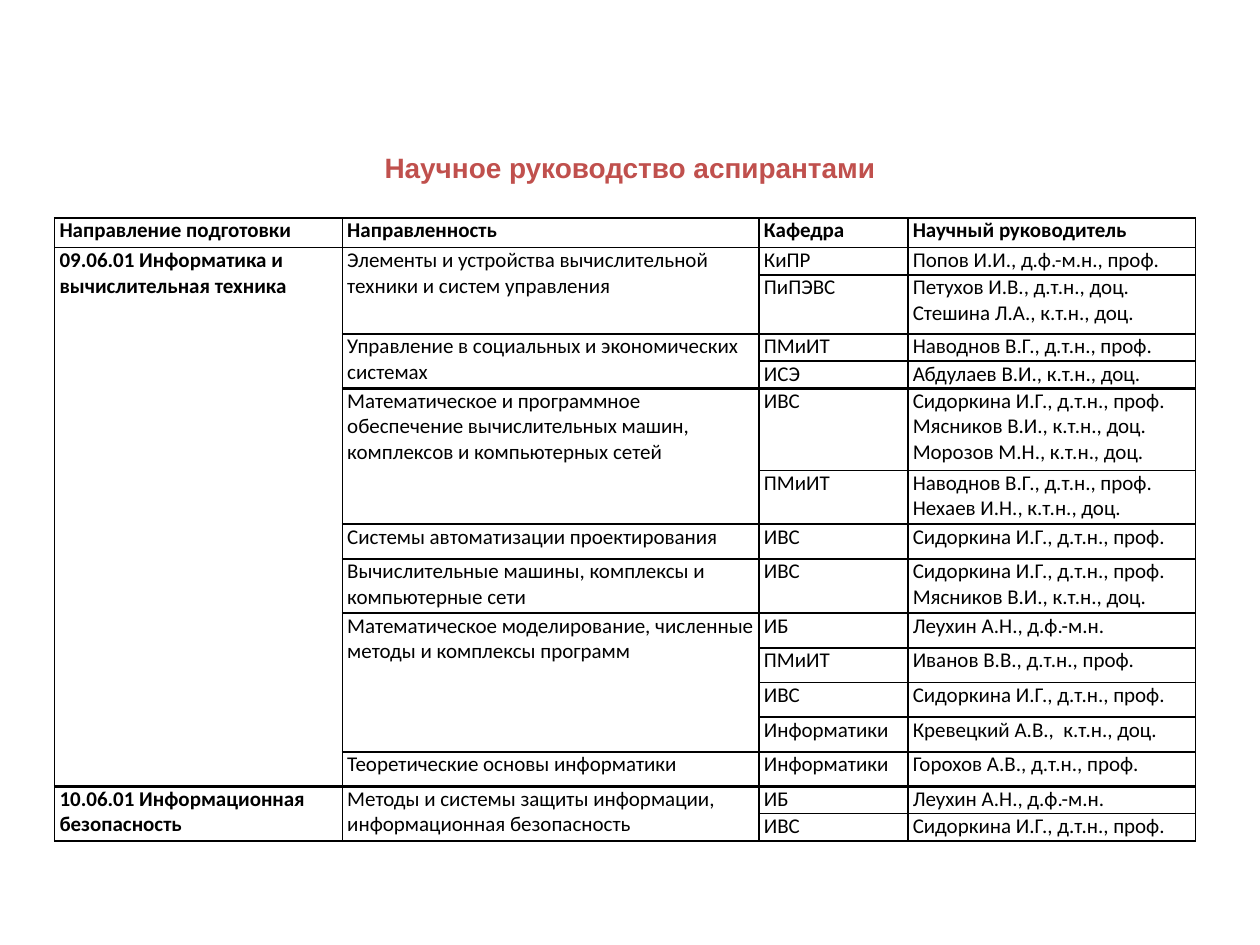
from dataclasses import dataclass

from lxml.etree import SubElement
from pptx import Presentation
from pptx.dml.color import RGBColor
from pptx.enum.text import MSO_ANCHOR, MSO_AUTO_SIZE, PP_ALIGN
from pptx.oxml.ns import qn
from pptx.table import Table, _Cell
from pptx.util import Cm, Pt

BLACK = RGBColor(0x00, 0x00, 0x00)
RED = RGBColor(0xC0, 0x50, 0x4D)
THIN, THICK = 1, 1.5
WIDTHS = (5.8, 8.4, 3, 5.8)
HEADS = ("Направление подготовки", "Направленность", "Кафедра", "Научный руководитель")


@dataclass
class Chair:
    name: str
    staff: list[str]
    height: float


@dataclass
class Focus:
    name: str
    chairs: list[Chair]


@dataclass
class Field:
    name: str
    topics: list[Focus]

    def rows(self) -> int:
        return sum(len(topic.chairs) for topic in self.topics)


SIDOR = "Сидоркина И.Г., д.т.н., проф."
MYASN = "Мясников В.И., к.т.н., доц."
NAVOD = "Наводнов В.Г., д.т.н., проф."
LEUKH = "Леухин А.Н., д.ф.-м.н."

FIELDS = [
    Field("09.06.01 Информатика и вычислительная техника", [
        Focus("Элементы и устройства вычислительной техники и систем управления", [
            Chair("КиПР", ["Попов И.И., д.ф.-м.н., проф."], 0.55),
            Chair("ПиПЭВС", ["Петухов И.В., д.т.н., доц.",
                             "Стешина Л.А., к.т.н., доц."], 1.19),
        ]),
        Focus("Управление в социальных и экономических системах", [
            Chair("ПМиИТ", [NAVOD], 0.55),
            Chair("ИСЭ", ["Абдулаев В.И., к.т.н., доц."], 0.55),
        ]),
        Focus("Математическое и программное обеспечение вычислительных машин, "
              "комплексов и компьютерных сетей", [
            Chair("ИВС", [SIDOR, MYASN, "Морозов М.Н., к.т.н., доц."], 1.65),
            Chair("ПМиИТ", [NAVOD, "Нехаев И.Н., к.т.н., доц."], 1.09),
        ]),
        Focus("Системы автоматизации проектирования", [Chair("ИВС", [SIDOR], 0.7)]),
        Focus("Вычислительные машины, комплексы и компьютерные сети", [
            Chair("ИВС", [SIDOR, MYASN], 1.09),
        ]),
        Focus("Математическое моделирование, численные методы и комплексы программ", [
            Chair("ИБ", [LEUKH], 0.7),
            Chair("ПМиИТ", ["Иванов В.В., д.т.н., проф."], 0.7),
            Chair("ИВС", [SIDOR], 0.7),
            Chair("Информатики", ["Кревецкий А.В.,  к.т.н., доц."], 0.7),
        ]),
        Focus("Теоретические основы информатики", [
            Chair("Информатики", ["Горохов А.В., д.т.н., проф."], 0.7),
        ]),
    ]),
    Field("10.06.01 Информационная безопасность", [
        Focus("Методы и системы защиты информации, информационная безопасность", [
            Chair("ИБ", [LEUKH], 0.55),
            Chair("ИВС", [SIDOR], 0.55),
        ]),
    ]),
]


def border(cell: _Cell, edges: dict[str, float]) -> None:
    props = cell._tc.get_or_add_tcPr()
    for side, width in edges.items():
        line = SubElement(props, qn(f"a:ln{side}"), w=str(Pt(width)))
        fill = SubElement(line, qn("a:solidFill"))
        SubElement(fill, qn("a:srgbClr"), val=str(BLACK))


def put(table: Table, row: int, col: int, lines: list[str], bold: bool = False,
        span: int = 1, top: float = THIN, bottom: float = THIN) -> None:
    """Fill one cell, merged down over span rows, and rule its outer edges."""
    cell = table.cell(row, col)
    last = table.cell(row + span - 1, col)
    if span > 1:
        cell.merge(last)
        border(last, {"L": THIN, "R": THIN, "B": bottom})
        for mid in range(row + 1, row + span - 1):
            border(table.cell(mid, col), {"L": THIN, "R": THIN})
    border(cell, {"L": THIN, "R": THIN, "T": top, "B": bottom})
    cell.fill.background()
    cell.margin_left = cell.margin_right = Cm(0.1)
    cell.margin_top = cell.margin_bottom = 0
    cell.vertical_anchor = MSO_ANCHOR.TOP
    frame = cell.text_frame
    for i, text in enumerate(lines):
        para = frame.add_paragraph() if i else frame.paragraphs[0]
        run = para.add_run()
        run.text = text
        run.font.name = "Calibri"
        run.font.size = Pt(12)
        run.font.bold = bold
        run.font.color.rgb = BLACK


def fill(table: Table) -> None:
    for col, head in enumerate(HEADS):
        put(table, 0, col, [head], bold=True)
    table.rows[0].height = Cm(0.6)
    row = 1
    for field in FIELDS:
        put(table, row, 0, [field.name], True, field.rows(),
            THIN if row == 1 else THICK, THICK)
        for topic in field.topics:
            count = len(topic.chairs)
            first = THIN if row == 1 else THICK
            put(table, row, 1, [topic.name], False, count, first, THICK)
            for i, chair in enumerate(topic.chairs):
                top = THIN if i else first
                bottom = THICK if i == count - 1 else THIN
                put(table, row, 2, [chair.name], top=top, bottom=bottom)
                put(table, row, 3, chair.staff, top=top, bottom=bottom)
                table.rows[row].height = Cm(chair.height)
                row += 1


def main() -> None:
    deck = Presentation()
    deck.slide_width, deck.slide_height = Cm(25.4), Cm(19.05)
    slide = deck.slides.add_slide(deck.slide_layouts[5])

    count = 1 + sum(field.rows() for field in FIELDS)
    frame = slide.shapes.add_table(count, len(WIDTHS), Cm(1.1), Cm(4.39),
                                   Cm(sum(WIDTHS)), Cm(12.57))
    table = frame.table
    table.first_row = table.horz_banding = False
    for col, width in zip(table.columns, WIDTHS):
        col.width = Cm(width)
    fill(table)

    title = slide.shapes.title
    title.left, title.top = Cm(0), Cm(2.92)
    title.width, title.height = Cm(25.4), Cm(0.79)
    text = title.text_frame
    text.word_wrap = True
    text.auto_size = MSO_AUTO_SIZE.NONE
    text.vertical_anchor = MSO_ANCHOR.MIDDLE
    para = text.paragraphs[0]
    para.alignment = PP_ALIGN.CENTER
    para.line_spacing = 1.15
    run = para.add_run()
    run.text = "Научное руководство аспирантами"
    run.font.name = "Arial"
    run.font.size = Pt(16)
    run.font.bold = True
    run.font.color.rgb = RED

    deck.save("out.pptx")


if __name__ == "__main__":
    main()
